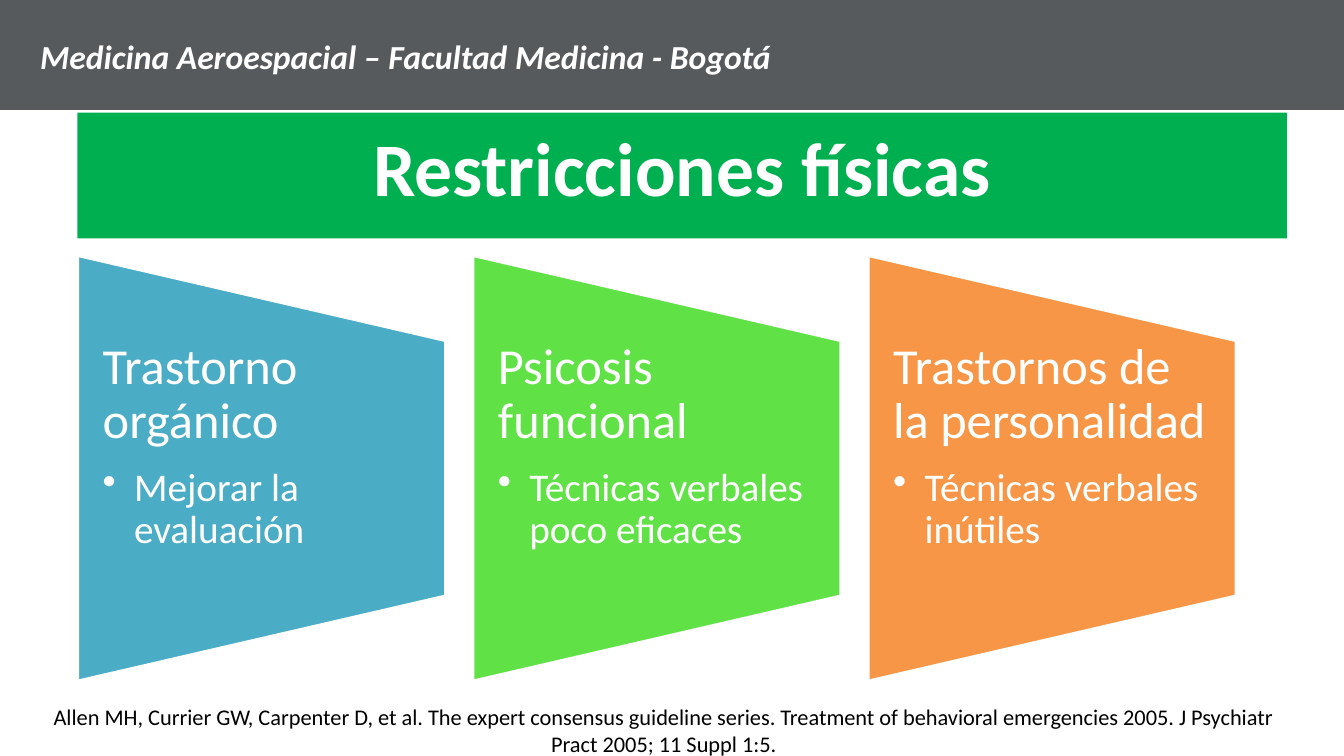
from lxml.etree import SubElement
from pptx import Presentation
from pptx.dml.color import RGBColor
from pptx.enum.shapes import MSO_SHAPE
from pptx.enum.text import MSO_ANCHOR, PP_ALIGN
from pptx.oxml.ns import qn
from pptx.util import Cm, Pt

FONT = "Calibri"
WHITE = "FFFFFF"
COLUMNS = [
    ("Trastorno orgánico", "Mejorar la evaluación", "4BACC6"),
    ("Psicosis funcional", "Técnicas verbales poco eficaces", "60E146"),
    ("Trastornos de la personalidad", "Técnicas verbales inútiles", "F79646"),
]


def color(value):
    return RGBColor.from_string(value)


def add_panel(page, kind, left, top, width, height, fill):
    panel = page.shapes.add_shape(kind, Cm(left), Cm(top), Cm(width), Cm(height))
    panel.shadow.inherit = False
    panel.fill.solid()
    panel.fill.fore_color.rgb = color(fill)
    panel.line.fill.background()
    return panel


def add_text_box(page, left, top, width, height, wrap=True):
    box = page.shapes.add_textbox(Cm(left), Cm(top), Cm(width), Cm(height))
    box.text_frame.word_wrap = wrap
    return box.text_frame


def write(para, text, size, ink=WHITE, bold=False, italic=False, align=PP_ALIGN.LEFT):
    para.text = text
    para.alignment = align
    para.font.name = FONT
    para.font.size = Pt(size)
    para.font.bold = bold
    para.font.italic = italic
    para.font.color.rgb = color(ink)


def add_bullet(para, indent):
    properties = para._p.get_or_add_pPr()
    properties.set("marL", str(Cm(indent)))
    properties.set("indent", str(-Cm(indent)))
    SubElement(properties, qn("a:buChar")).set("char", "•")


def add_header(page, left, top, width, height):
    add_panel(page, MSO_SHAPE.RECTANGLE, left, top, width, height, "565A5C")
    frame = add_text_box(page, left + 0.76, top + 0.79, 19.08, 1.27, wrap=False)
    write(frame.paragraphs[0], "Medicina Aeroespacial – Facultad Medicina - Bogotá",
          24, bold=True, italic=True)


def add_title(page, left, top, width, height):
    banner = add_panel(page, MSO_SHAPE.RECTANGLE, left, top, width, height, "00B050")
    frame = banner.text_frame
    frame.vertical_anchor = MSO_ANCHOR.TOP
    frame.margin_top = Cm(0.2)
    write(frame.paragraphs[0], "Restricciones físicas", 54, bold=True,
          align=PP_ALIGN.CENTER)


def add_column(page, left, top, width, height, heading, detail, fill):
    # Trapezoid turned on its side, so its sides are swapped around the centre
    shift = (width - height) / 2
    trapezoid = add_panel(page, MSO_SHAPE.FLOWCHART_MANUAL_OPERATION,
                          left + shift, top - shift, height, width, fill)
    trapezoid.rotation = 270
    trapezoid.line.color.rgb = color(WHITE)
    trapezoid.line.width = Pt(2)

    # Heading and bullet in the middle three fifths
    frame = add_text_box(page, left, top + height / 5, width, height * 3 / 5)
    frame.margin_left = frame.margin_right = Cm(0.63)
    frame.margin_top = frame.margin_bottom = 0
    title_para = frame.paragraphs[0]
    write(title_para, heading, 36)
    title_para.line_spacing = 0.9
    title_para.space_after = Pt(12.6)
    bullet_para = frame.add_paragraph()
    add_bullet(bullet_para, 0.79)
    write(bullet_para, detail, 28)
    bullet_para.line_spacing = 0.9


def add_columns(page, left, top, width, height, gap=0.69):
    column_width = (width - gap * (len(COLUMNS) - 1)) / len(COLUMNS)
    for index, (heading, detail, fill) in enumerate(COLUMNS):
        add_column(page, left + index * (column_width + gap), top,
                   column_width, height, heading, detail, fill)


def add_citation(page, left, top, width, height):
    frame = add_text_box(page, left, top, width, height)
    write(frame.paragraphs[0],
          "Allen MH, Currier GW, Carpenter D, et al. The expert consensus guideline "
          "series. Treatment of behavioral emergencies 2005. J Psychiatr Pract 2005; "
          "11 Suppl 1:5.", 16, ink="000000", align=PP_ALIGN.CENTER)


def main():
    deck = Presentation()
    deck.slide_width, deck.slide_height = Cm(33.87), Cm(19.05)
    page = deck.slides.add_slide(deck.slide_layouts[6])
    add_header(page, 0, 0, 33.87, 2.77)
    add_title(page, 1.95, 2.84, 30.48, 3.17)
    add_columns(page, 1.96, 6.44, 29.19, 10.72)
    add_citation(page, 1.02, 17.6, 31.42, 1.63)
    deck.save("out.pptx")


if __name__ == "__main__":
    main()
